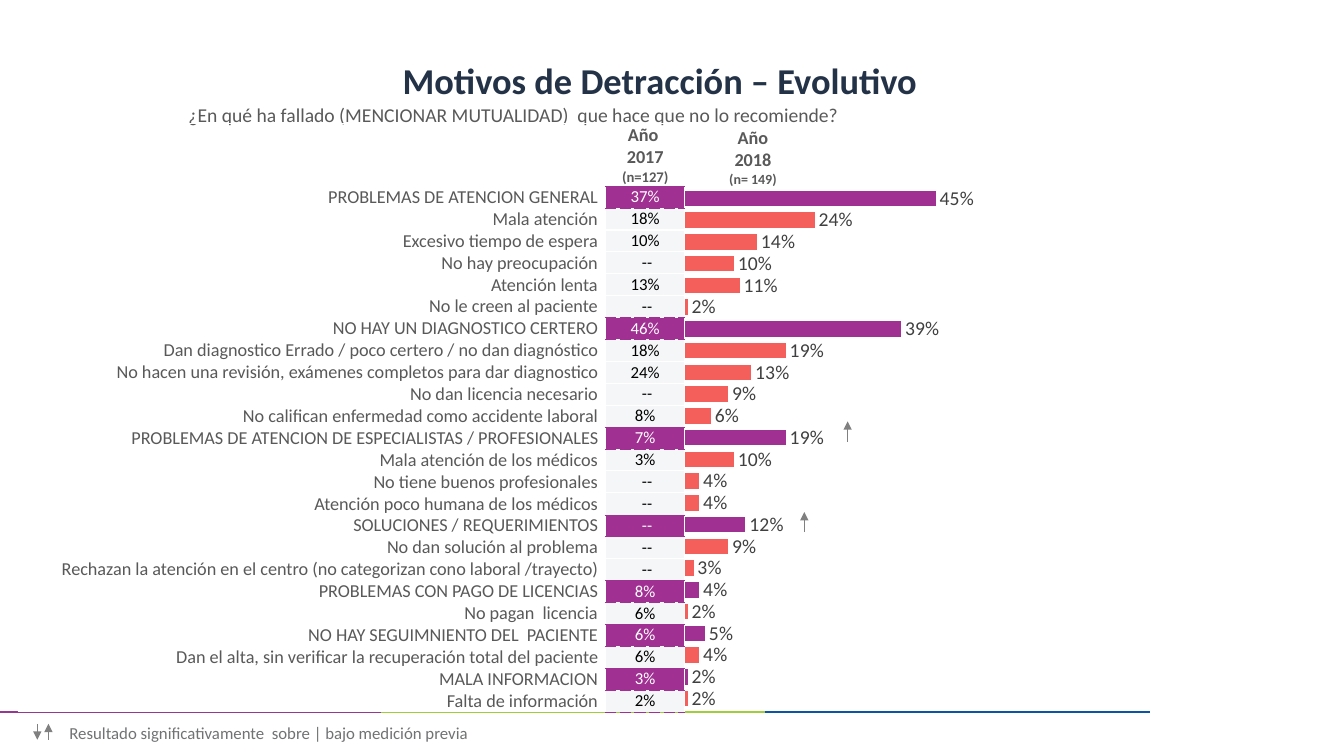
"""Build the slide on reasons for detraction, 2017 against 2018."""
from dataclasses import dataclass

from lxml import etree
from pptx import Presentation
from pptx.chart import data as chart_data
from pptx.dml.color import RGBColor
from pptx.enum import chart as charts, shapes, text
from pptx.oxml.ns import qn
from pptx.util import Cm, Pt


@dataclass(frozen=True)
class Theme:
    """Colours, type sizes and font of the slide."""
    font: str = "Calibri"
    navy: str = "233247"
    body: str = "595959"
    legend: str = "717274"
    value: str = "404040"
    arrow: str = "808080"
    purple: str = "A03192"
    coral: str = "F55F5B"
    pale: str = "F5F6F8"
    white: str = "FFFFFF"
    black: str = "000000"
    rules: tuple = ("963791", "A2CD3A", "0B56A4")
    title_size: float = 26
    caption_size: float = 14
    label_size: float = 13
    share_size: float = 12
    base_size: float = 10.5
    small_base_size: float = 10


THEME = Theme()
RULE_Y = 17.93
RULE_SPANS = ((0, 9.68), (9.6, 19.28), (19.28, 28.98))
REASONS = (
    ("PROBLEMAS DE ATENCION GENERAL", "37%", 45),
    ("Mala atención", "18%", 24),
    ("Excesivo tiempo de espera", "10%", 14),
    ("No hay preocupación", " --", 10),
    ("Atención lenta", "13%", 11),
    ("No le creen al paciente", " --", 2),
    ("NO HAY UN DIAGNOSTICO CERTERO", "46%", 39),
    ("Dan diagnostico Errado / poco certero / no dan diagnóstico", "18%", 19),
    ("No hacen una revisión, exámenes completos para dar diagnostico", "24%", 13),
    ("No dan licencia necesario", " --", 9),
    ("No califican enfermedad como accidente laboral", "8%", 6),
    ("PROBLEMAS DE ATENCION DE ESPECIALISTAS / PROFESIONALES", "7%", 19),
    ("Mala atención de los médicos", "3%", 10),
    ("No tiene buenos profesionales", " --", 4),
    ("Atención poco humana de los médicos", " --", 4),
    ("SOLUCIONES / REQUERIMIENTOS", " --", 12),
    ("No dan solución al problema", " --", 9),
    ("Rechazan la atención en el centro (no categorizan cono laboral /trayecto)", " --", 3),
    ("PROBLEMAS CON PAGO DE LICENCIAS", "8%", 4),
    ("No pagan  licencia", "6%", 2),
    ("NO HAY SEGUIMNIENTO DEL  PACIENTE", "6%", 5),
    ("Dan el alta, sin verificar la recuperación total del paciente", "6%", 4),
    ("MALA INFORMACION", "3%", 2),
    ("Falta de información", "2%", 2),
)


def set_font(font, size, color, bold=False):
    """Give a font the theme face with a size, colour and weight."""
    font.name, font.size, font.bold = THEME.font, Pt(size), bold
    font.color.rgb = RGBColor.from_string(color)


def write(frame, lines, align):
    """Fill a text frame with (text, size, colour, bold) lines."""
    for index, (words, size, color, bold) in enumerate(lines):
        para = frame.add_paragraph() if index else frame.paragraphs[0]
        para.text, para.alignment = words, align
        set_font(para.font, size, color, bold)


def year_lines(year_word, year, base, base_size):
    """Return the three lines that head a year's column."""
    return [(year_word, THEME.label_size, THEME.body, True),
            (year, THEME.label_size, THEME.body, True),
            (base, base_size, THEME.body, True)]


def add_text(page, area, lines, align=text.PP_ALIGN.LEFT):
    """Add a wrapping text box."""
    box = page.shapes.add_textbox(*map(Cm, area))
    box.text_frame.word_wrap = True
    write(box.text_frame, lines, align)


def add_line(page, start, end, color, width, arrow=False):
    """Add a straight line, with an arrowhead at its end if asked."""
    line = page.shapes.add_connector(
        shapes.MSO_CONNECTOR.STRAIGHT, *map(Cm, (*start, *end)))
    line.line.color.rgb = RGBColor.from_string(color)
    line.line.width = Pt(width)
    properties = line._element.spPr
    if arrow:
        etree.SubElement(properties.find(qn("a:ln")), qn("a:tailEnd"), type="triangle")
    etree.SubElement(properties, qn("a:effectLst"))


def add_title(page):
    """Place and format the title placeholder."""
    title = page.shapes.title
    title.left, title.top, title.width, title.height = map(Cm, (2.93, 1.37, 27.41, 1.42))
    frame = title.text_frame
    frame.auto_size = text.MSO_AUTO_SIZE.NONE
    frame.vertical_anchor = text.MSO_ANCHOR.MIDDLE
    write(frame, [("Motivos de Detracción – Evolutivo", THEME.title_size, THEME.navy, True)],
          text.PP_ALIGN.CENTER)
    frame.paragraphs[0].line_spacing = 0.9


def set_borders(cell, dashed):
    """Draw white cell borders, dashed purple on the named sides."""
    for side in "LRTB":
        color, width = (THEME.purple, 0.25) if side in dashed else (THEME.white, 1)
        border = etree.SubElement(cell._tc.get_or_add_tcPr(), qn(f"a:ln{side}"), w=str(Pt(width)))
        fill = etree.SubElement(border, qn("a:solidFill"))
        etree.SubElement(fill, qn("a:srgbClr"), val=color)
        etree.SubElement(border, qn("a:prstDash"), val="sysDash" if side in dashed else "solid")


def format_cell(cell, lines, align, anchor, right=0.03, fill=None, dashed=""):
    """Write a table cell and set its borders, fill and margins."""
    set_borders(cell, dashed)
    if fill:
        cell.fill.solid()
        cell.fill.fore_color.rgb = RGBColor.from_string(fill)
    else:
        cell.fill.background()
    cell.margin_left, cell.margin_right = Cm(0.03), Cm(right)
    cell.margin_top = cell.margin_bottom = 0
    cell.vertical_anchor = anchor
    write(cell.text_frame, lines, align)


def add_reason_table(page):
    """Add the table of reasons and their 2017 shares."""
    count = len(REASONS)
    table = page.shapes.add_table(
        count + 1, 2, *map(Cm, (0.46, 3.12, 16.8, 1.57 + 0.55 * count))).table
    table.first_row = table.horz_banding = False
    for column, width in zip(table.columns, (14.8, 2)):
        column.width = Cm(width)
    for index, row in enumerate(table.rows):
        row.height = Cm(0.55 if index else 1.57)
    bottom, middle = text.MSO_ANCHOR.BOTTOM, text.MSO_ANCHOR.MIDDLE
    right, center = text.PP_ALIGN.RIGHT, text.PP_ALIGN.CENTER
    format_cell(table.cell(0, 0), [], right, bottom)
    format_cell(table.cell(0, 1), year_lines("Año ", "2017", "(n=127)", THEME.base_size),
                center, bottom, dashed="B")
    groups = [reason.isupper() for reason, _, _ in REASONS]
    for index, (reason, share, _) in enumerate(REASONS):
        group = groups[index]
        dashed = "T" if group or groups[index - 1] else ""
        if group or index == count - 1 or groups[index + 1]:
            dashed += "B"
        format_cell(table.cell(index + 1, 0), [(reason, THEME.label_size, THEME.body, False)],
                    right, bottom, right=0.2)
        ink, fill = (THEME.white, THEME.purple) if group else (THEME.black, THEME.pale)
        format_cell(table.cell(index + 1, 1), [(share, THEME.share_size, ink, False)],
                    center, middle, fill=fill, dashed=dashed)


def set_plot_area(chart, **fractions):
    """Fix the inner plot area as fractions of the chart."""
    area = chart._chartSpace.chart.plotArea
    for old in area.findall(qn("c:layout")):
        area.remove(old)
    layout = etree.Element(qn("c:layout"))
    area.insert(0, layout)
    manual = etree.SubElement(layout, qn("c:manualLayout"))
    settings = {"layoutTarget": "inner", "xMode": "edge", "yMode": "edge", **fractions}
    for name, value in settings.items():
        etree.SubElement(manual, qn(f"c:{name}"), val=str(value))


def add_share_chart(page):
    """Add the bar chart of 2018 shares."""
    data = chart_data.CategoryChartData()
    data.categories = [str(number + 1) for number in range(len(REASONS))]
    data.add_series("Series 1", [share for _, _, share in REASONS])
    chart = page.shapes.add_chart(charts.XL_CHART_TYPE.BAR_CLUSTERED,
                                  *map(Cm, (16.33, 4.32, 14.22, 13.59)), data).chart
    chart.has_legend = chart.has_title = False
    set_font(chart.font, THEME.small_base_size, THEME.black)
    for axis in (chart.category_axis, chart.value_axis):
        axis.tick_label_position = charts.XL_TICK_LABEL_POSITION.NONE
        axis.major_tick_mark = axis.minor_tick_mark = charts.XL_TICK_MARK.NONE
        axis.has_major_gridlines = False
        axis.format.line.fill.background()
    chart.category_axis.reverse_order = True
    chart.value_axis.minimum_scale, chart.value_axis.maximum_scale = 0, 90
    plot = chart.plots[0]
    plot.gap_width, plot.vary_by_categories = 40, False
    bars = plot.series[0]
    bars.format.fill.solid()
    bars.format.fill.fore_color.rgb = RGBColor.from_string(THEME.coral)
    for index, (reason, _, _) in enumerate(REASONS):
        if reason.isupper():
            fill = bars.points[index].format.fill
            fill.solid()
            fill.fore_color.rgb = RGBColor.from_string(THEME.purple)
    labels = bars.data_labels
    labels.show_value = True
    labels.position = charts.XL_LABEL_POSITION.OUTSIDE_END
    labels.number_format, labels.number_format_is_linked = '0"%"', False
    set_font(labels.font, THEME.caption_size, THEME.value)
    set_plot_area(chart, x=0.05, y=0.03, w=0.92, h=0.97)


def main():
    """Build and save the deck."""
    deck = Presentation()
    deck.slide_width, deck.slide_height = Cm(33.87), Cm(19.05)
    page = deck.slides.add_slide(deck.slide_layouts[5])
    for (start, end), color in zip(RULE_SPANS, THEME.rules):
        add_line(page, (start, RULE_Y), (end, RULE_Y), color, 1.5)
    add_title(page)
    question = "¿En qué ha fallado (MENCIONAR MUTUALIDAD)  que hace que no lo recomiende?"
    add_text(page, (4.5, 2.46, 25.45, 0.86),
             [(question, THEME.caption_size, THEME.body, False)])
    add_share_chart(page)
    add_reason_table(page)
    add_text(page, (17.25, 3.07, 3.45, 1.83),
             year_lines("Año", "2018", "(n= 149)", THEME.small_base_size), text.PP_ALIGN.CENTER)
    legend = "Resultado significativamente  sobre | bajo medición previa"
    add_text(page, (1.5, 18.08, 11.13, 0.76),
             [(legend, THEME.share_size, THEME.legend, False)])
    for x, start, end in ((21.36, 11.13, 10.62), (20.27, 13.41, 12.9),
                          (0.94, 18.24, 18.64), (1.22, 18.64, 18.24)):
        add_line(page, (x, start), (x, end), THEME.arrow, 0.75, arrow=True)
    deck.save("out.pptx")


if __name__ == "__main__":
    main()
